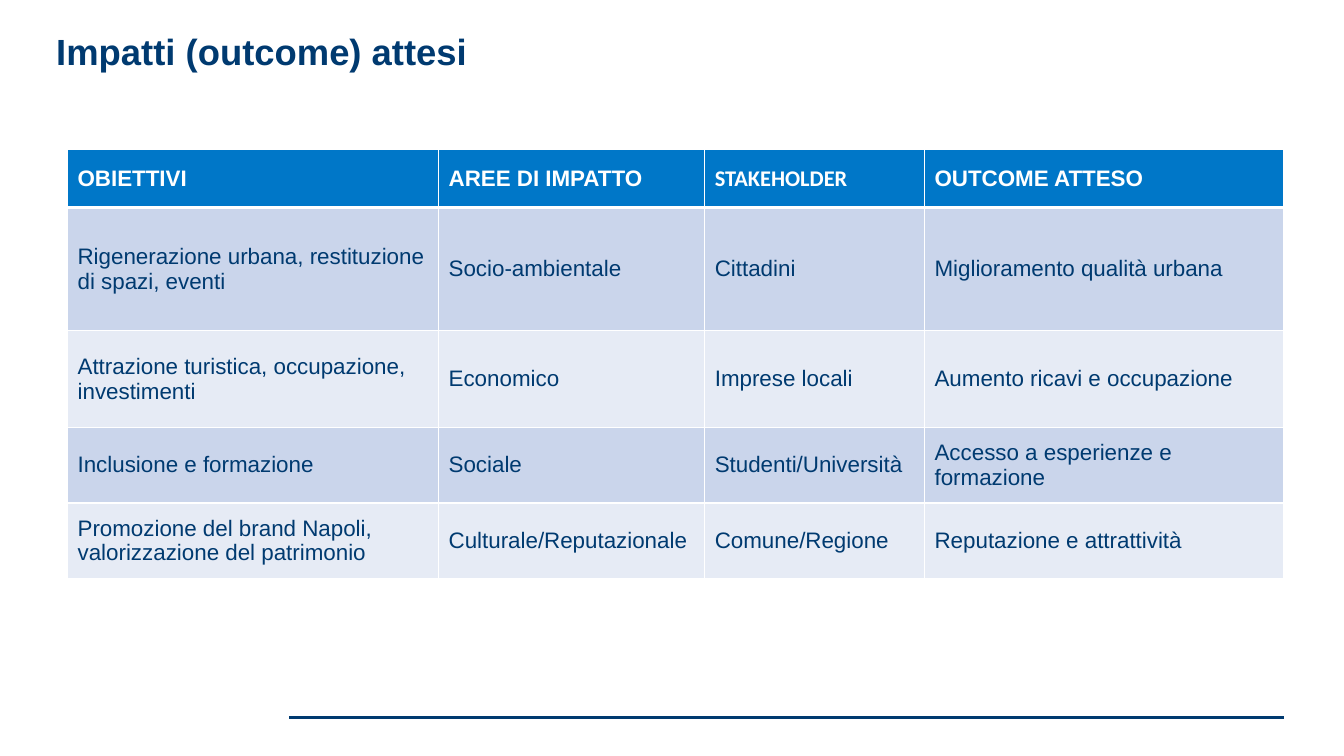
from lxml import etree
from pptx import Presentation
from pptx import util as u
from pptx.dml.color import RGBColor
from pptx.enum import shapes, text
from pptx.oxml import ns

NAVY, BLUE, WHITE = "003A70", "0077C8", "FFFFFF"
BANDS = ["CAD5EB", "E6EBF5"]
COLUMN_WIDTHS = [3.68, 2.64, 2.18, 3.56]
ROW_HEIGHTS = [0.58, 1.22, 0.96, 0.75, 0.75]
IMPACTS = [
    ["OBIETTIVI", "AREE DI IMPATTO", "STAKEHOLDER", "OUTCOME ATTESO"],
    ["Rigenerazione urbana, restituzione di spazi, eventi", "Socio-ambientale",
     "Cittadini", "Miglioramento qualità urbana"],
    ["Attrazione turistica, occupazione, investimenti", "Economico",
     "Imprese locali", "Aumento ricavi e occupazione"],
    ["Inclusione e formazione", "Sociale",
     "Studenti/Università", "Accesso a esperienze e formazione"],
    ["Promozione del brand Napoli, valorizzazione del patrimonio",
     "Culturale/Reputazionale", "Comune/Regione", "Reputazione e attrattività"],
]


def color(value):
    return RGBColor.from_string(value)


def add_run(paragraph, words, size, ink, bold=False, face="Arial"):
    run = paragraph.add_run()
    run.text = words
    run.font.name = face
    run.font.size = u.Pt(size)
    run.font.bold = bold
    run.font.color.rgb = color(ink)


def set_borders(cell, widths):
    properties = cell._tc.get_or_add_tcPr()
    for position, (side, width) in enumerate(widths.items()):
        border = etree.Element(ns.qn(f"a:ln{side}"), w=str(u.Pt(width)))
        fill = etree.SubElement(border, ns.qn("a:solidFill"))
        etree.SubElement(fill, ns.qn("a:srgbClr"), val=WHITE)
        properties.insert(position, border)


def draw_title(slide, left, top, width, height):
    frame = slide.shapes.add_textbox(
        u.Inches(left), u.Inches(top), u.Inches(width), u.Inches(height)).text_frame
    frame.word_wrap = True
    frame.vertical_anchor = text.MSO_ANCHOR.TOP
    heading = frame.paragraphs[0]
    heading.line_spacing = 0.9
    add_run(heading, "Impatti (outcome) attesi", 26, NAVY, bold=True)


def draw_impacts(slide, left, top, width, height):
    table = slide.shapes.add_table(
        len(IMPACTS), len(COLUMN_WIDTHS), u.Inches(left), u.Inches(top),
        u.Inches(width), u.Inches(height)).table
    for column, share in zip(table.columns, COLUMN_WIDTHS):
        column.width = u.Inches(width * share / sum(COLUMN_WIDTHS))
    for row, share in zip(table.rows, ROW_HEIGHTS):
        row.height = u.Inches(height * share / sum(ROW_HEIGHTS))
    for r, impact in enumerate(IMPACTS):
        header = r == 0
        for c, words in enumerate(impact):
            cell = table.cell(r, c)
            cell.vertical_anchor = text.MSO_ANCHOR.MIDDLE
            cell.fill.solid()
            cell.fill.fore_color.rgb = color(BLUE if header else BANDS[(r - 1) % 2])
            set_borders(cell, {"L": 1, "R": 1, "T": 3 if r == 1 else 1,
                               "B": 3 if header else 1})
            add_run(cell.text_frame.paragraphs[0], words, 16,
                    WHITE if header else NAVY, bold=header,
                    face="Calibri" if words == "STAKEHOLDER" else "Arial")


def draw_footer_rule(slide, left, top, width):
    rule = slide.shapes.add_connector(
        shapes.MSO_CONNECTOR.STRAIGHT, u.Inches(left), u.Inches(top),
        u.Inches(left + width), u.Inches(top))
    rule.line.color.rgb = color(NAVY)
    rule.line.width = u.Pt(2.25)
    etree.SubElement(rule._element.spPr, ns.qn("a:effectLst"))


def main():
    deck = Presentation()
    deck.slide_width, deck.slide_height = u.Inches(13.33), u.Inches(7.5)
    slide = deck.slides.add_slide(deck.slide_layouts[6])
    draw_footer_rule(slide, 2.87, 7.12, 9.86)
    draw_title(slide, 0.46, 0.29, 12.27, 1.09)
    draw_impacts(slide, 0.67, 1.48, 12.06, 4.26)
    deck.save("out.pptx")


if __name__ == "__main__":
    main()
